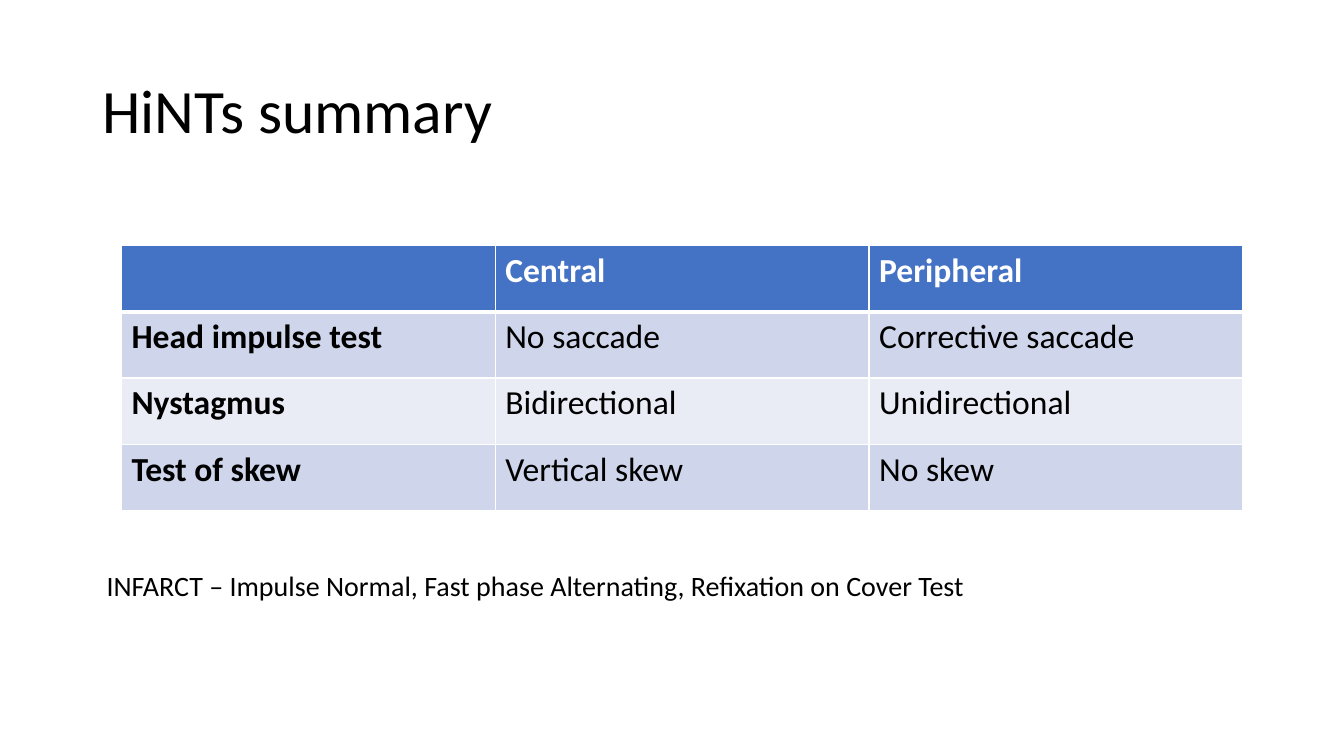
from dataclasses import dataclass

from lxml import etree
from pptx import Presentation
from pptx.dml.color import RGBColor
from pptx.enum import text
from pptx.oxml import ns
from pptx.util import Pt


@dataclass(frozen=True)
class Theme:
    font: str = "Calibri"
    ink: str = "000000"
    white: str = "FFFFFF"
    header: str = "4472C4"
    bands: tuple = ("CFD5EA", "E9EBF5")
    title_size: int = 44
    table_size: int = 24
    note_size: int = 20
    rule: int = 1
    header_rule: int = 3


THEME = Theme()

SIGNS = [
    ("", "Central", "Peripheral"),
    ("Head impulse test", "No saccade", "Corrective saccade"),
    ("Nystagmus", "Bidirectional", "Unidirectional"),
    ("Test of skew", "Vertical skew", "No skew"),
]


def write(tf, words, size, color=THEME.ink, bold=False, spacing=1.0,
          anchor=text.MSO_ANCHOR.TOP):
    tf.word_wrap = True
    tf.vertical_anchor = anchor
    p = tf.paragraphs[0]
    p.alignment = text.PP_ALIGN.LEFT
    p.line_spacing = spacing
    r = p.add_run()
    r.text = words
    r.font.name = THEME.font
    r.font.size = Pt(size)
    r.font.bold = bold
    r.font.color.rgb = RGBColor.from_string(color)


def add_border(cell, side, width):
    tc_pr = cell._tc.get_or_add_tcPr()
    ln = etree.SubElement(tc_pr, ns.qn(f"a:ln{side}"), w=str(Pt(width)))
    fill = etree.SubElement(ln, ns.qn("a:solidFill"))
    etree.SubElement(fill, ns.qn("a:srgbClr"), val=THEME.white)


def add_title(s, box, words):
    sp = s.shapes.title
    sp.left, sp.top, sp.width, sp.height = map(Pt, box)
    sp.text_frame.auto_size = text.MSO_AUTO_SIZE.NONE
    write(sp.text_frame, words, THEME.title_size, spacing=0.9,
          anchor=text.MSO_ANCHOR.MIDDLE)


def add_signs_table(s, box, rows):
    left, top, width, height = box
    table = s.shapes.add_table(len(rows), len(rows[0]), *map(Pt, box)).table
    for column in table.columns:
        column.width = Pt(width / len(rows[0]))
    for i, row in enumerate(rows):
        table.rows[i].height = Pt(height / len(rows))
        is_header = i == 0
        for j, words in enumerate(row):
            cell = table.cell(i, j)
            for side in "LRTB":
                thick = (i, side) in ((0, "B"), (1, "T"))
                add_border(cell, side, THEME.header_rule if thick else THEME.rule)
            cell.fill.solid()
            cell.fill.fore_color.rgb = RGBColor.from_string(
                THEME.header if is_header else THEME.bands[(i - 1) % 2])
            if words:
                write(cell.text_frame, words, THEME.table_size,
                      color=THEME.white if is_header else THEME.ink,
                      bold=is_header or j == 0)


def add_note(s, box, words):
    tf = s.shapes.add_textbox(*map(Pt, box)).text_frame
    tf.auto_size = text.MSO_AUTO_SIZE.SHAPE_TO_FIT_TEXT
    write(tf, words, THEME.note_size)


def main():
    prs = Presentation()
    prs.slide_width, prs.slide_height = Pt(960), Pt(540)
    s = prs.slides.add_slide(prs.slide_layouts[5])
    add_title(s, (66, 28.75, 828, 104.4), "HiNTs summary")
    add_signs_table(s, (86.75, 175.25, 801, 189.5), SIGNS)
    add_note(s, (69, 402.5, 819, 31.5),
             "INFARCT – Impulse Normal, Fast phase Alternating, "
             "Refixation on Cover Test")
    prs.save("out.pptx")


if __name__ == "__main__":
    main()
